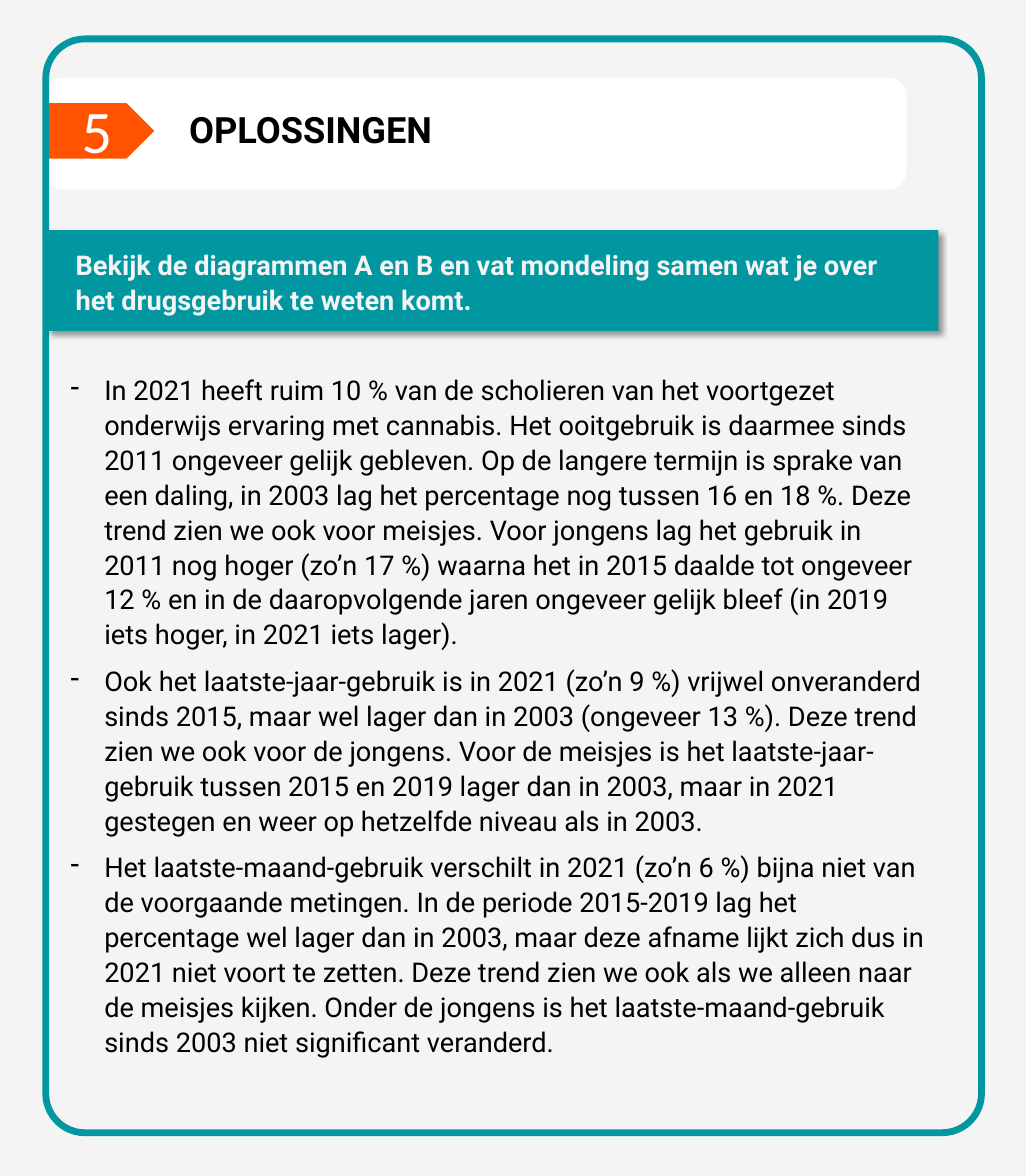
from dataclasses import dataclass

from lxml import etree
from pptx import Presentation
from pptx.dml.color import RGBColor
from pptx.enum.shapes import MSO_SHAPE
from pptx.enum.text import MSO_ANCHOR, MSO_AUTO_SIZE, PP_ALIGN
from pptx.oxml.ns import qn
from pptx.util import Cm, Pt

RECTANGLE = MSO_SHAPE.RECTANGLE
ROUNDED = MSO_SHAPE.ROUNDED_RECTANGLE
PENTAGON = MSO_SHAPE.PENTAGON
TOP = MSO_ANCHOR.TOP
LEFT = PP_ALIGN.LEFT
NO_AUTOFIT = MSO_AUTO_SIZE.NONE
TITLE_ONLY = 5

TITLE = "OPLOSSINGEN"
QUESTION = (
    "Bekijk de diagrammen A en B en vat mondeling samen wat je over "
    "het drugsgebruik te weten komt."
)
ANSWERS = [
    "In 2021 heeft ruim 10 % van de scholieren van het voortgezet onderwijs "
    "ervaring met cannabis. Het ooitgebruik is daarmee sinds 2011 ongeveer "
    "gelijk gebleven. Op de langere termijn is sprake van een daling, in 2003 "
    "lag het percentage nog tussen 16 en 18 %. Deze trend zien we ook voor "
    "meisjes. Voor jongens lag het gebruik in 2011 nog hoger (zo’n 17 %) waarna "
    "het in 2015 daalde tot ongeveer 12 % en in de daaropvolgende jaren ongeveer "
    "gelijk bleef (in 2019 iets hoger, in 2021 iets lager).",
    "Ook het laatste-jaar-gebruik is in 2021 (zo’n 9 %) vrijwel onveranderd "
    "sinds 2015, maar wel lager dan in 2003 (ongeveer 13 %). Deze trend zien we "
    "ook voor de jongens. Voor de meisjes is het laatste-jaar-gebruik tussen "
    "2015 en 2019 lager dan in 2003, maar in 2021 gestegen en weer op hetzelfde "
    "niveau als in 2003.",
    "Het laatste-maand-gebruik verschilt in 2021 (zo’n 6 %) bijna niet van de "
    "voorgaande metingen. In de periode 2015-2019 lag het percentage wel lager "
    "dan in 2003, maar deze afname lijkt zich dus in 2021 niet voort te zetten. "
    "Deze trend zien we ook als we alleen naar de meisjes kijken. Onder de "
    "jongens is het laatste-maand-gebruik sinds 2003 niet significant veranderd.",
]


@dataclass(frozen=True)
class Theme:
    background: RGBColor = RGBColor.from_string("F4F4F4")
    card: RGBColor = RGBColor.from_string("FFFFFF")
    accent: RGBColor = RGBColor.from_string("FF5300")
    teal: RGBColor = RGBColor.from_string("0097A1")
    ink: RGBColor = RGBColor.from_string("000000")
    font: str = "Roboto"
    number_font: str = "Calibri"
    body_size: int = 18
    title_size: int = 24
    number_size: int = 40
    line_spacing: float = 1.07


class SlideBuilder:
    def __init__(self, slide, theme):
        self.slide = slide
        self.theme = theme
        slide.background.fill.solid()
        slide.background.fill.fore_color.rgb = theme.background

    def shape(self, kind, box, fill=None, line=None, width=1, corner=None):
        shape = self.slide.shapes.add_shape(kind, *map(Cm, box))
        shape.shadow.inherit = False
        if corner is not None:
            shape.adjustments[0] = corner
        if fill is None:
            shape.fill.background()
        else:
            shape.fill.solid()
            shape.fill.fore_color.rgb = fill
        if line is None:
            shape.line.fill.background()
        else:
            shape.line.color.rgb = line
            shape.line.width = Pt(width)
        return shape

    def drop_shadow(self, shape):
        effects = shape.element.spPr.find(qn("a:effectLst"))
        shadow = etree.SubElement(
            effects, qn("a:outerShdw"), blurRad=str(Pt(4)), dist=str(Pt(3)),
            dir=str(45 * 60000), algn="tl", rotWithShape="0",
        )
        color = etree.SubElement(shadow, qn("a:srgbClr"), val=str(self.theme.ink))
        etree.SubElement(color, qn("a:alpha"), val="40000")

    def run(self, paragraph, text, size, color, bold=False, font=None):
        run = paragraph.add_run()
        run.text = text
        run.font.name = font or self.theme.font
        run.font.size = Pt(size)
        run.font.bold = bold
        run.font.color.rgb = color

    def frame(self, shape):
        frame = shape.text_frame
        frame.word_wrap = True
        frame.auto_size = NO_AUTOFIT
        frame.vertical_anchor = TOP
        frame.paragraphs[0].alignment = LEFT
        return frame

    def title(self, text, box):
        title = self.slide.shapes.title
        title.left, title.top, title.width, title.height = map(Cm, box)
        # Bring the title in front of the card drawn so far
        title.element.getparent().append(title.element)
        paragraph = self.frame(title).paragraphs[0]
        self.run(paragraph, text, self.theme.title_size, self.theme.ink, bold=True)

    def text(self, text, box, size, color, bold=False, font=None,
             spacing=None, before=0, inset=0.25):
        frame = self.frame(self.slide.shapes.add_textbox(*map(Cm, box)))
        frame.margin_left = Cm(inset)
        paragraph = frame.paragraphs[0]
        paragraph.line_spacing = spacing
        paragraph.space_before = Pt(before)
        self.run(paragraph, text, size, color, bold, font)

    def dash_list(self, items, box, indent):
        frame = self.frame(self.slide.shapes.add_textbox(*map(Cm, box)))
        for index, item in enumerate(items):
            paragraph = frame.add_paragraph() if index else frame.paragraphs[0]
            paragraph.line_spacing = self.theme.line_spacing
            paragraph.space_after = Pt(8)
            self.run(paragraph, item, self.theme.body_size, self.theme.ink)
            properties = paragraph._p.get_or_add_pPr()
            properties.set("marL", str(Cm(indent)))
            properties.set("indent", str(-Cm(indent)))
            etree.SubElement(properties, qn("a:buChar"), char="-")


def main():
    theme = Theme()
    presentation = Presentation()
    presentation.slide_width = Cm(24)
    presentation.slide_height = Cm(27.5)
    layout = presentation.slide_layouts[TITLE_ONLY]
    builder = SlideBuilder(presentation.slides.add_slide(layout), theme)

    # Header card with number tag and title
    builder.shape(ROUNDED, (1.07, 1.83, 20.12, 2.59), theme.card, theme.card)
    builder.shape(PENTAGON, (1.07, 2.41, 2.54, 1.3), theme.accent)
    builder.title(TITLE, (4.17, 2.39, 15.77, 1.27))

    # Frame around the slide
    builder.shape(ROUNDED, (1.07, 0.91, 21.89, 25.58), line=theme.teal,
                  width=4.5, corner=0.042)
    builder.text("5", (1.02, 2.06, 2.59, 1.96), theme.number_size, theme.card,
                 font=theme.number_font, inset=0.89)

    # Answers
    builder.dash_list(ANSWERS, (1.4, 8.56, 20.55, 15.6), indent=0.79)

    # Question banner
    banner = builder.shape(RECTANGLE, (1.12, 5.38, 20.83, 2.36), theme.teal)
    builder.drop_shadow(banner)
    builder.text(QUESTION, (1.52, 5.64, 19.71, 1.85), theme.body_size,
                 theme.background, bold=True, spacing=theme.line_spacing, before=6)

    presentation.save("out.pptx")


if __name__ == "__main__":
    main()
